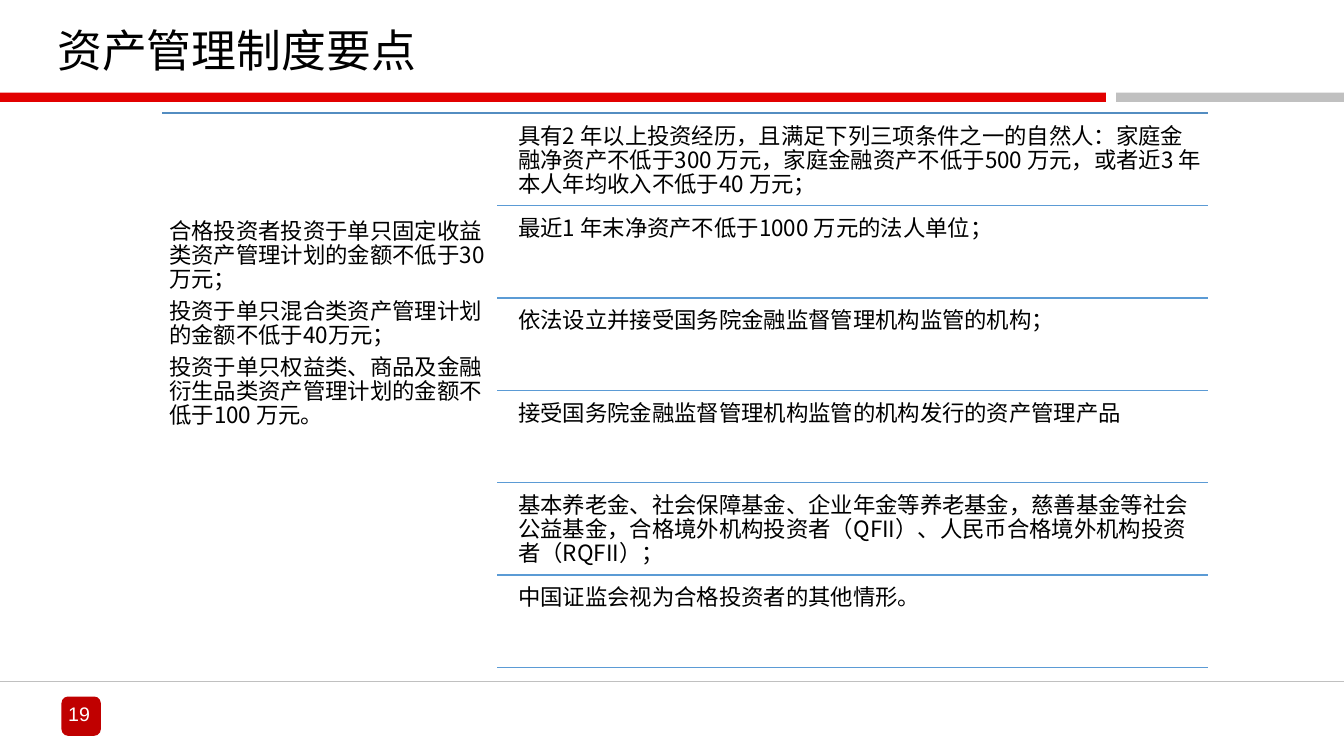
from dataclasses import dataclass

from lxml.etree import SubElement
from pptx import Presentation
from pptx.dml.color import RGBColor
from pptx.enum.shapes import MSO_CONNECTOR, MSO_SHAPE
from pptx.enum.text import MSO_ANCHOR, PP_ALIGN
from pptx.oxml.ns import qn
from pptx.util import Inches, Pt


@dataclass(frozen=True)
class Theme:
    """Colours, fonts and type sizes of the slide."""
    red: str = "E20000"
    badge: str = "C00000"
    grey: str = "C0C0C0"
    top_rule: str = "538DC1"
    rule: str = "5B9BD5"
    ink: str = "000000"
    white: str = "FFFFFF"
    title_font: str = "Times New Roman"
    body_font: str = "Noto Sans CJK SC"
    number_font: str = "Arial"
    title_size: int = 32
    body_size: int = 16
    number_size: int = 14


THEME = Theme()

AMOUNTS = [
    "合格投资者投资于单只固定收益类资产管理计划的金额不低于30 万元；",
    "投资于单只混合类资产管理计划的金额不低于40万元；",
    "投资于单只权益类、商品及金融衍生品类资产管理计划的金额不低于100 万元。",
]

INVESTORS = [
    "具有2 年以上投资经历，且满足下列三项条件之一的自然人：家庭金融净资产不低于300 万元，"
    "家庭金融资产不低于500 万元，或者近3 年本人年均收入不低于40 万元；",
    "最近1 年末净资产不低于1000 万元的法人单位；",
    "依法设立并接受国务院金融监督管理机构监管的机构；",
    "接受国务院金融监督管理机构监管的机构发行的资产管理产品",
    "基本养老金、社会保障基金、企业年金等养老基金，慈善基金等社会公益基金，"
    "合格境外机构投资者（QFII）、人民币合格境外机构投资者（RQFII）；",
    "中国证监会视为合格投资者的其他情形。",
]

FIRST_ROW_TOP = 1.17
ROW_PITCH = 0.916
ROW_HEIGHT = 0.87


def add_block(slide, preset, left, top, width, height, color):
    """Add a plain filled shape."""
    block = slide.shapes.add_shape(
        preset, Inches(left), Inches(top), Inches(width), Inches(height))
    block.shadow.inherit = False
    block.fill.solid()
    block.fill.fore_color.rgb = RGBColor.from_string(color)
    block.line.fill.background()


def add_rule(slide, left, right, y, color):
    """Add a thin horizontal line."""
    rule = slide.shapes.add_connector(
        MSO_CONNECTOR.STRAIGHT, Inches(left), Inches(y), Inches(right), Inches(y))
    rule.line.color.rgb = RGBColor.from_string(color)
    rule.line.width = Pt(1)
    SubElement(rule._element.spPr, qn("a:effectLst"))


def add_text(slide, left, top, width, height, paragraphs, size, font, color,
             inset=0.07, anchor=MSO_ANCHOR.TOP, align=PP_ALIGN.LEFT):
    """Add a wrapped text box with one run per paragraph."""
    box = slide.shapes.add_textbox(
        Inches(left), Inches(top), Inches(width), Inches(height))
    frame = box.text_frame
    frame.word_wrap = True
    frame.vertical_anchor = anchor
    frame.margin_left = frame.margin_right = Inches(inset)
    frame.margin_top = frame.margin_bottom = Inches(min(inset, 0.07))
    for index, text in enumerate(paragraphs):
        paragraph = frame.add_paragraph() if index else frame.paragraphs[0]
        paragraph.alignment = align
        paragraph.line_spacing = 0.9
        paragraph.space_after = Pt(size * 0.35)
        run = paragraph.add_run()
        run.text = text
        run.font.size = Pt(size)
        run.font.name = font
        run.font.color.rgb = RGBColor.from_string(color)
        SubElement(run.font._element, qn("a:ea"), typeface=THEME.body_font)


def add_frame(slide):
    """Add the title, the header bars and the numbered footer."""
    add_block(slide, MSO_SHAPE.ROUNDED_RECTANGLE, 0.61, 6.91, 0.39, 0.39, THEME.badge)
    add_block(slide, MSO_SHAPE.RECTANGLE, 0, 0.92, 10.97, 0.09, THEME.red)
    add_block(slide, MSO_SHAPE.RECTANGLE, 11.07, 0.92, 2.26, 0.09, THEME.grey)
    add_rule(slide, 0, 13.33, 6.76, THEME.grey)
    add_text(slide, 0.31, 6.92, 0.95, 0.37, ["19"], THEME.number_size,
             THEME.number_font, THEME.white, align=PP_ALIGN.CENTER)
    add_text(slide, 0.47, 0.12, 11, 0.72, ["资产管理制度要点"], THEME.title_size,
             THEME.title_font, THEME.ink, inset=0.1, anchor=MSO_ANCHOR.BOTTOM)


def add_investor_rows(slide):
    """Add each kind of qualified investor with a rule under it."""
    for row, investor in enumerate(INVESTORS):
        top = FIRST_ROW_TOP + row * ROW_PITCH
        add_text(slide, 5.07, top, 6.92, ROW_HEIGHT, [investor],
                 THEME.body_size, THEME.body_font, THEME.ink)
        add_rule(slide, 4.93, 11.98, top + ROW_HEIGHT, THEME.rule)


def main():
    """Build the slide and save it."""
    deck = Presentation()
    deck.slide_width, deck.slide_height = Inches(13.33), Inches(7.5)
    slide = deck.slides.add_slide(deck.slide_layouts[6])
    add_frame(slide)
    add_rule(slide, 1.61, 11.98, 1.12, THEME.top_rule)
    add_text(slide, 1.61, 2.11, 3.33, 4.56, AMOUNTS,
             THEME.body_size, THEME.body_font, THEME.ink)
    add_investor_rows(slide)
    deck.save("out.pptx")


if __name__ == "__main__":
    main()
